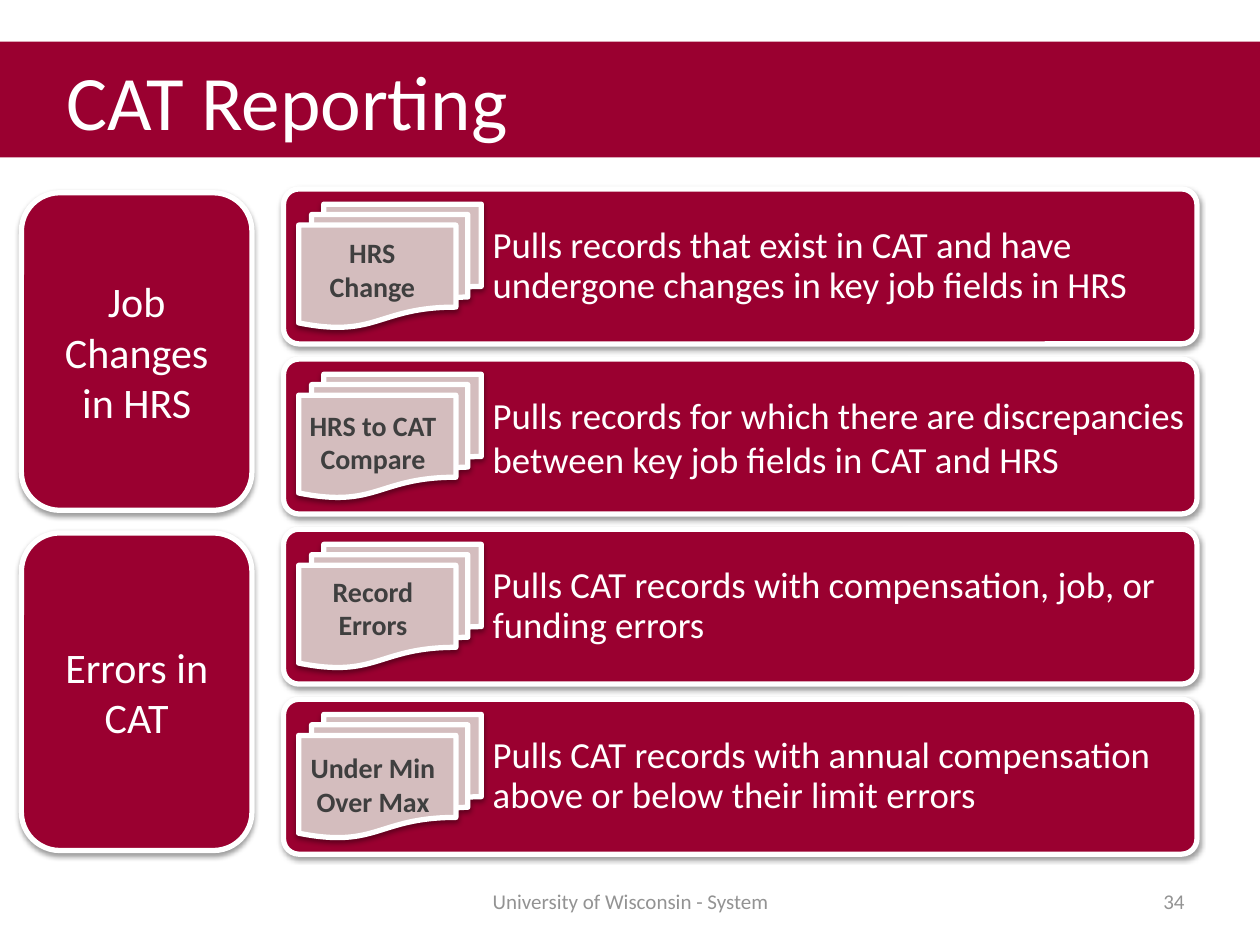
from lxml import etree
from pptx import Presentation
from pptx.dml.color import RGBColor
from pptx.enum.shapes import MSO_SHAPE
from pptx.enum.text import MSO_ANCHOR, MSO_AUTO_SIZE, PP_ALIGN
from pptx.oxml.ns import qn
from pptx.util import Inches, Pt

CRIMSON = RGBColor(0x9A, 0x00, 0x30)
ROSE = RGBColor(0xD4, 0xBD, 0xBE)
WHITE = RGBColor(0xFF, 0xFF, 0xFF)
CHARCOAL = RGBColor(0x3F, 0x3F, 0x3F)
GRAY = RGBColor(0x93, 0x93, 0x93)

ROUNDED = MSO_SHAPE.ROUNDED_RECTANGLE
DOCUMENTS = MSO_SHAPE.FLOWCHART_MULTIDOCUMENT
LEFT, CENTER, RIGHT = PP_ALIGN.LEFT, PP_ALIGN.CENTER, PP_ALIGN.RIGHT
TOP, MIDDLE = MSO_ANCHOR.TOP, MSO_ANCHOR.MIDDLE
NO_AUTOFIT = MSO_AUTO_SIZE.NONE

FONT = "Calibri"
REPORT_TOP = 1.5
REPORT_STEP = 1.35
CATEGORY_TOP = 1.53
CATEGORY_STEP = 2.7

CATEGORIES = ["Job Changes in HRS", "Errors in CAT"]
REPORTS = [
    ("HRS Change", (2.33, 1.82, 1.25, 0.64), 0.9,
     "Pulls records that exist in CAT and have undergone changes in key job fields in HRS"),
    ("HRS to CAT Compare", (2.25, 3.19, 1.42, 0.64), 1.0,
     "Pulls records for which there are discrepancies between key job fields in CAT and HRS"),
    ("Record Errors", (2.25, 4.51, 1.42, 0.64), 0.9,
     "Pulls CAT records with compensation, job, or funding errors"),
    ("Under Min Over Max", (2.25, 5.91, 1.42, 0.64), 0.9,
     "Pulls CAT records with annual compensation above or below their limit errors"),
]


def write(frame, text, size, color, align=LEFT, anchor=MIDDLE, bold=False, spacing=1.0):
    frame.word_wrap = True
    frame.auto_size = NO_AUTOFIT
    frame.vertical_anchor = anchor
    paragraph = frame.paragraphs[0]
    paragraph.alignment = align
    paragraph.line_spacing = spacing
    run = paragraph.add_run()
    run.text = text
    run.font.name = FONT
    run.font.size = Pt(size)
    run.font.bold = bold
    run.font.color.rgb = color


def add_soft_shadow(panel):
    panel.shadow.inherit = False
    effects = panel._element.spPr.find(qn("a:effectLst"))
    shadow = etree.SubElement(effects, qn("a:outerShdw"), blurRad=str(Pt(3.1)),
                              dist=str(Pt(1.6)), dir="5400000", rotWithShape="0")
    black = etree.SubElement(shadow, qn("a:srgbClr"), val="000000")
    etree.SubElement(black, qn("a:alpha"), val="38000")


def add_panel(slide, preset, box, fill):
    panel = slide.shapes.add_shape(preset, *map(Inches, box))
    panel.fill.solid()
    panel.fill.fore_color.rgb = fill
    panel.line.color.rgb = WHITE
    panel.line.width = Pt(3)
    add_soft_shadow(panel)
    return panel


def add_text(slide, box, text, size, color, **style):
    frame = slide.shapes.add_textbox(*map(Inches, box)).text_frame
    write(frame, text, size, color, **style)
    return frame


def add_title(slide, text):
    title = slide.shapes.title
    title.left, title.top, title.width, title.height = map(Inches, (0, 0.33, 10, 0.92))
    title.fill.solid()
    title.fill.fore_color.rgb = CRIMSON
    title.text_frame.margin_left = Inches(0.53)
    write(title.text_frame, text, 44, WHITE)


def add_report(slide, top, name, name_box, spacing, description):
    bar = add_panel(slide, ROUNDED, (2.25, top, 7.25, 1.23), CRIMSON)
    bar.adjustments[0] = 0.1
    frame = add_text(slide, (3.82, top, 5.68, 1.23), description, 21, WHITE, spacing=spacing)
    frame.margin_left = Inches(0.09)
    frame.margin_right = Inches(0.05)
    add_panel(slide, DOCUMENTS, (2.37, top + 0.12, 1.45, 0.98), ROSE)
    add_text(slide, name_box, name, 16, CHARCOAL, align=CENTER, anchor=TOP, bold=True)


def add_category(slide, top, name):
    panel = add_panel(slide, ROUNDED, (0.17, top, 1.83, 2.52), CRIMSON)
    write(panel.text_frame, name, 24, WHITE, align=CENTER)


def main():
    presentation = Presentation()
    presentation.slide_width = Inches(10)
    presentation.slide_height = Inches(7.5)
    slide = presentation.slides.add_slide(presentation.slide_layouts[5])

    add_title(slide, "CAT Reporting")
    for index, report in enumerate(REPORTS):
        add_report(slide, REPORT_TOP + index * REPORT_STEP, *report)
    for index, category in enumerate(CATEGORIES):
        add_category(slide, CATEGORY_TOP + index * CATEGORY_STEP, category)
    add_text(slide, (3.42, 6.95, 3.17, 0.4), "University of Wisconsin - System",
             12, GRAY, align=CENTER)
    add_text(slide, (7.17, 6.95, 2.33, 0.4), "34", 12, GRAY, align=RIGHT)

    presentation.save("out.pptx")


if __name__ == "__main__":
    main()
